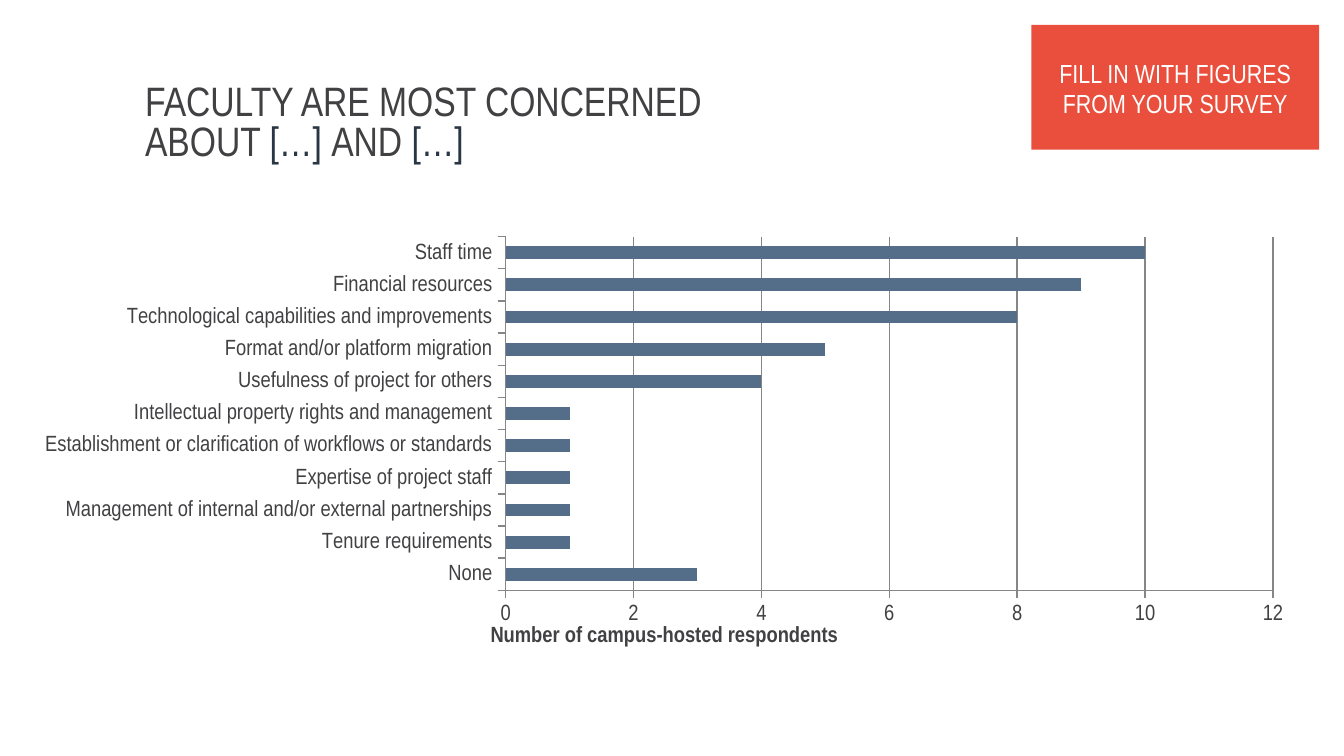
import pptx
import pptx.chart.data
import pptx.dml.color
import pptx.enum.chart
import pptx.enum.shapes
import pptx.enum.text
import pptx.oxml
import pptx.oxml.ns
import pptx.util

PX = 4572
THEME = {
    "font": "Arial Narrow",
    "text": pptx.dml.color.RGBColor.from_string("414042"),
    "blank": pptx.dml.color.RGBColor.from_string("2A3644"),
    "bar": pptx.dml.color.RGBColor.from_string("546D89"),
    "line": pptx.dml.color.RGBColor.from_string("868686"),
    "callout": pptx.dml.color.RGBColor.from_string("E94F3C"),
    "white": pptx.dml.color.RGBColor.from_string("FFFFFF"),
    "title_size": pptx.util.Pt(22),
    "callout_size": pptx.util.Pt(14),
    "chart_size": pptx.util.Pt(12),
}


def style_font(font, size, color, bold=False):
    font.name = THEME["font"]
    font.size = THEME[size]
    font.color.rgb = THEME[color]
    font.bold = bold


def set_layout(parent, position, target="", **percentages):
    for old_layout in parent.findall(pptx.oxml.ns.qn("c:layout")):
        parent.remove(old_layout)
    settings = "".join(f'<c:{name} val="{percentage / 100}"/>'
                       for name, percentage in percentages.items())
    parent.insert(position, pptx.oxml.parse_xml(
        f'<c:layout {pptx.oxml.ns.nsdecls("c")}><c:manualLayout>{target}'
        f'<c:xMode val="edge"/><c:yMode val="edge"/>{settings}'
        "</c:manualLayout></c:layout>"))


presentation = pptx.Presentation()
presentation.slide_width = 2000 * PX
presentation.slide_height = 1125 * PX
slide = presentation.slides.add_slide(presentation.slide_layouts[6])

title = slide.shapes.add_textbox(172 * PX, 126 * PX, 986 * PX, 112 * PX)
title_frame = title.text_frame
title_frame.word_wrap = True
title_frame.margin_left = 44 * PX
title_frame.margin_top = title_frame.margin_right = title_frame.margin_bottom = 0
paragraph = title_frame.paragraphs[0]
paragraph.line_spacing = 0.81
for text, color in [
    ("FACULTY ARE MOST CONCERNED ABOUT ", "text"),
    ("[…] ", "blank"),
    ("AND ", "text"),
    ("[…]", "blank"),
]:
    run = paragraph.add_run()
    run.text = text
    style_font(run.font, "title_size", color)

concerns = [
    ("None", 3),
    ("Tenure requirements", 1),
    ("Management of internal and/or external partnerships", 1),
    ("Expertise of project staff", 1),
    ("Establishment or clarification of workflows or standards", 1),
    ("Intellectual property rights and management", 1),
    ("Usefulness of project for others", 4),
    ("Format and/or platform migration", 5),
    ("Technological capabilities and improvements", 8),
    ("Financial resources", 9),
    ("Staff time", 10),
]
chart_data = pptx.chart.data.CategoryChartData()
chart_data.categories = [concern for concern, count in concerns]
chart_data.add_series("Series 1", [count for concern, count in concerns])
chart = slide.shapes.add_chart(
    pptx.enum.chart.XL_CHART_TYPE.BAR_CLUSTERED,
    40 * PX, 322 * PX, 1900 * PX, 650 * PX, chart_data).chart
chart.has_title = False
chart.has_legend = False
style_font(chart.font, "chart_size", "text")
plot = chart.plots[0]
plot.gap_width = 150
plot.vary_by_categories = False
series = plot.series[0]
series.format.fill.solid()
series.format.fill.fore_color.rgb = THEME["bar"]

value_axis = chart.value_axis
value_axis.minimum_scale = 0
value_axis.maximum_scale = 12
value_axis.major_unit = 2
value_axis.has_major_gridlines = True
for axis in (chart.category_axis, value_axis):
    axis.major_tick_mark = pptx.enum.chart.XL_TICK_MARK.OUTSIDE
    axis.minor_tick_mark = pptx.enum.chart.XL_TICK_MARK.NONE
    style_font(axis.tick_labels.font, "chart_size", "text")
for line in (chart.category_axis.format.line, value_axis.format.line,
             value_axis.major_gridlines.format.line):
    line.color.rgb = THEME["line"]
    line.width = pptx.util.Pt(0.75)

axis_title = value_axis.axis_title
run = axis_title.text_frame.paragraphs[0].add_run()
run.text = "Number of campus-hosted respondents"
style_font(run.font, "chart_size", "text", bold=True)
set_layout(axis_title._element, 1, x=36, y=93.2)
set_layout(chart._chartSpace.chart.plotArea, 0, '<c:layoutTarget val="inner"/>',
           x=37.5, y=4.7, w=60.1, h=81.9)

callout = slide.shapes.add_shape(
    pptx.enum.shapes.MSO_SHAPE.RECTANGLE, 1535 * PX, 37 * PX, 428 * PX, 186 * PX)
callout.shadow.inherit = False
callout.fill.solid()
callout.fill.fore_color.rgb = THEME["callout"]
callout.line.fill.background()
callout_frame = callout.text_frame
callout_frame.word_wrap = True
callout_frame.margin_top = 17 * PX
callout_frame.vertical_anchor = pptx.enum.text.MSO_ANCHOR.MIDDLE
paragraph = callout_frame.paragraphs[0]
paragraph.alignment = pptx.enum.text.PP_ALIGN.CENTER
paragraph.line_spacing = 0.95
run = paragraph.add_run()
run.text = "FILL IN WITH FIGURES FROM YOUR SURVEY"
style_font(run.font, "callout_size", "white")

presentation.save("out.pptx")
